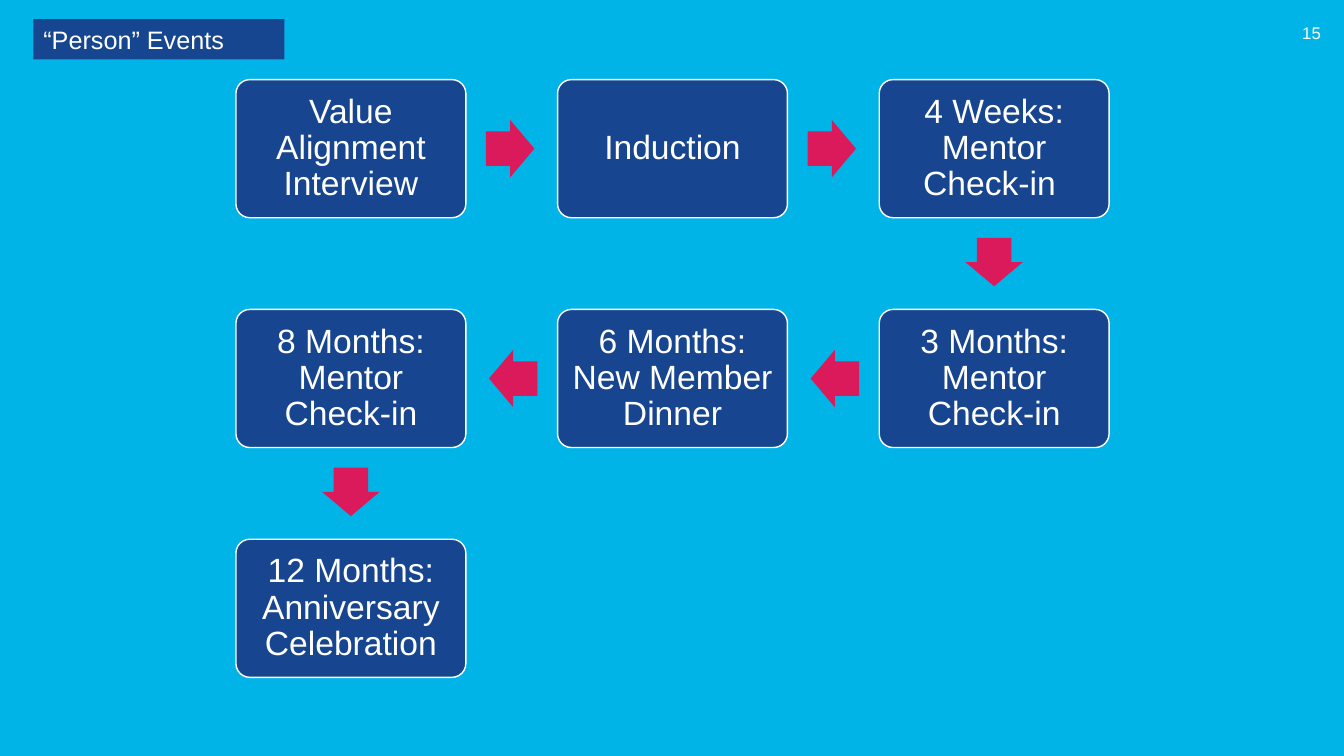
from pptx import Presentation
from pptx.dml.color import RGBColor
from pptx.enum.shapes import MSO_SHAPE
from pptx.enum.text import MSO_ANCHOR, MSO_AUTO_SIZE, PP_ALIGN
from pptx.util import Inches, Pt

TITLE = "“Person” Events"
PAGE_NUMBER = "15"
# Events in order, each with its column and row
EVENTS = [
    ("Value Alignment Interview", 0, 0),
    ("Induction", 1, 0),
    ("4 Weeks: Mentor Check-in ", 2, 0),
    ("3 Months: Mentor Check-in", 2, 1),
    ("6 Months: New Member Dinner", 1, 1),
    ("8 Months: Mentor Check-in", 0, 1),
    ("12 Months: Anniversary Celebration", 0, 2),
]
SKY, NAVY, TITLE_NAVY, CRIMSON, WHITE = "01B4E7", "17458F", "16468F", "DA1A5A", "FFFFFF"

GRID_LEFT, GRID_TOP = 2.34, 0.79
COLUMN_STEP, ROW_STEP = 3.19, 2.28
BOX_WIDTH, BOX_HEIGHT = 2.28, 1.37
ARROW_LENGTH, ARROW_WIDTH, ARROW_GAP = 0.48, 0.57, 0.2
ROTATION = {(1, 0): 0, (0, 1): 90, (-1, 0): 180}


def paint(target, color):
    target.solid()
    target.fore_color.rgb = RGBColor.from_string(color)


def write(shape, text, size, align, anchor, inset=None, line_spacing=None):
    frame = shape.text_frame
    frame.text = text
    settings = {"word_wrap": True, "auto_size": MSO_AUTO_SIZE.NONE, "vertical_anchor": anchor}
    if inset is not None:
        for side in ("left", "right", "top", "bottom"):
            settings[f"margin_{side}"] = Inches(inset)
    for name, value in settings.items():
        setattr(frame, name, value)
    paragraph = frame.paragraphs[0]
    paragraph.alignment = align
    if line_spacing:
        paragraph.line_spacing = line_spacing
    font = paragraph.runs[0].font
    for name, value in {"name": "Arial", "size": Pt(size)}.items():
        setattr(font, name, value)
    font.color.rgb = RGBColor.from_string(WHITE)


def add_filled(slide, preset, left, top, width, height, color):
    shape = slide.shapes.add_shape(preset, *map(Inches, (left, top, width, height)))
    shape.shadow.inherit = False
    paint(shape.fill, color)
    return shape


def box_center(column, row):
    return (GRID_LEFT + column * COLUMN_STEP + BOX_WIDTH / 2,
            GRID_TOP + row * ROW_STEP + BOX_HEIGHT / 2)


def add_event(slide, text, column, row):
    x, y = box_center(column, row)
    box = add_filled(slide, MSO_SHAPE.ROUNDED_RECTANGLE, x - BOX_WIDTH / 2,
                     y - BOX_HEIGHT / 2, BOX_WIDTH, BOX_HEIGHT, NAVY)
    box.adjustments[0] = 0.1
    paint(box.line.fill, WHITE)
    box.line.width = Pt(1)
    write(box, text, 24, PP_ALIGN.CENTER, MSO_ANCHOR.MIDDLE, 0.1, 0.9)


def add_arrow(slide, start, end):
    """Place an arrow just beyond the start box, pointing to the end box."""
    step_x, step_y = end[0] - start[0], end[1] - start[1]
    x, y = box_center(*start)
    reach = ARROW_GAP + ARROW_LENGTH / 2
    x += step_x * (BOX_WIDTH / 2 + reach)
    y += step_y * (BOX_HEIGHT / 2 + reach)
    arrow = add_filled(slide, MSO_SHAPE.RIGHT_ARROW, x - ARROW_LENGTH / 2,
                       y - ARROW_WIDTH / 2, ARROW_LENGTH, ARROW_WIDTH, CRIMSON)
    arrow.adjustments[0], arrow.adjustments[1] = 0.6, 0.5
    arrow.line.fill.background()
    arrow.rotation = ROTATION[step_x, step_y]


def main():
    deck = Presentation()
    deck.slide_width, deck.slide_height = Inches(13.33), Inches(7.5)
    slide = deck.slides.add_slide(deck.slide_layouts[5])
    paint(slide.background.fill, SKY)

    title = slide.shapes.title
    title.left, title.top, title.width, title.height = map(Inches, (0.33, 0.19, 2.49, 0.4))
    paint(title.fill, TITLE_NAVY)
    write(title, TITLE, 18, PP_ALIGN.LEFT, MSO_ANCHOR.TOP)

    number = slide.shapes.add_textbox(*map(Inches, (12.74, 0.13, 0.46, 0.4)))
    write(number, PAGE_NUMBER, 12, PP_ALIGN.RIGHT, MSO_ANCHOR.MIDDLE)

    for event in EVENTS:
        add_event(slide, *event)
    for (_, *start), (_, *end) in zip(EVENTS, EVENTS[1:]):
        add_arrow(slide, start, end)

    deck.save("out.pptx")


if __name__ == "__main__":
    main()
